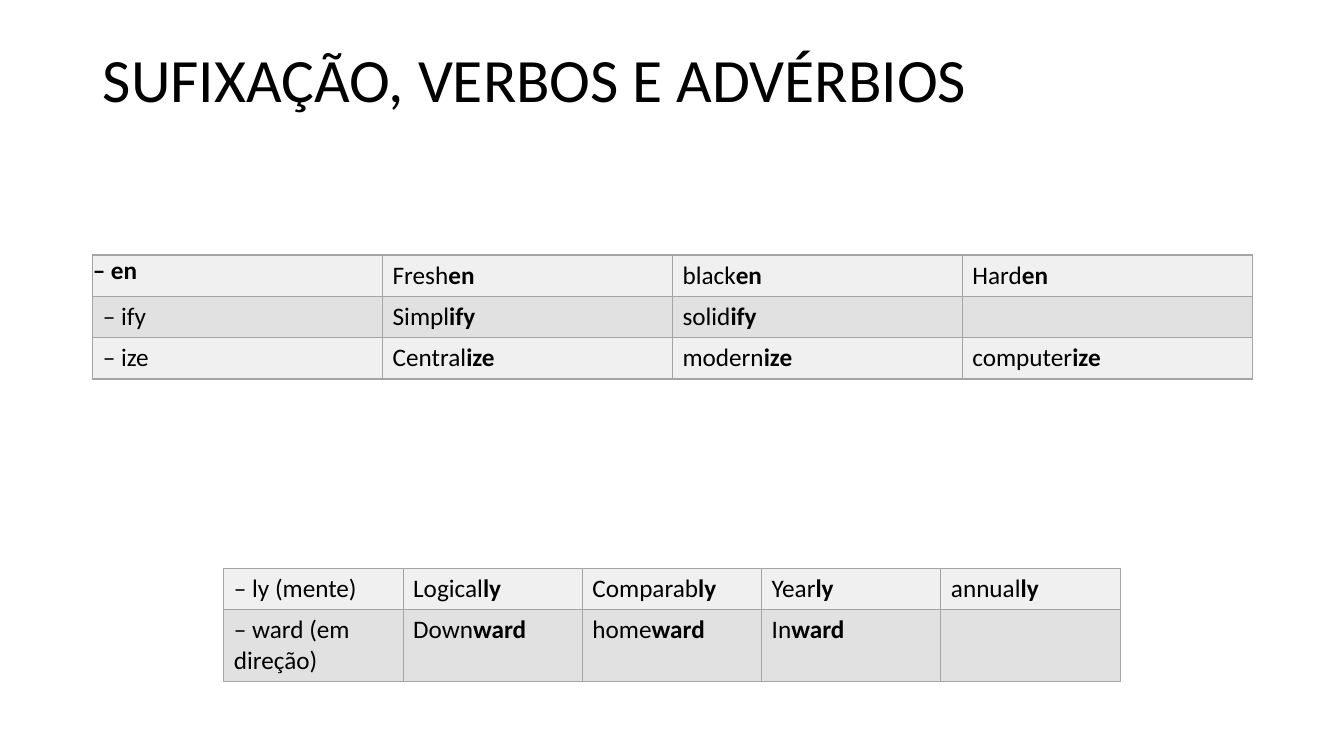
from lxml import etree
from pptx import Presentation
from pptx import util as u
from pptx.dml.color import RGBColor
from pptx.enum import text
from pptx.oxml import ns

PX = 9144  # 100 px to the inch
BLACK, BORDER = "000000", "A5A5A5"
BANDS = ("F0F0F0", "E1E1E1")

# The bar separates the stem from the bold suffix.
VERBS = [
    ["|– en", "Fresh|en", "black|en", "Hard|en"],
    ["– ify", "Simpl|ify", "solid|ify", ""],
    ["– ize", "Central|ize", "modern|ize", "computer|ize"],
]
ADVERBS = [
    ["– ly (mente)", "Logical|ly", "Comparab|ly", "Year|ly", "annual|ly"],
    ["– ward (em direção)", "Down|ward", "home|ward", "In|ward", ""],
]


def px(length):
    return u.Emu(round(length * PX))


def color(value):
    return RGBColor.from_string(value)


def set_values(target, values):
    for name, value in values.items():
        setattr(target, name, value)


def add_run(paragraph, words, size, bold=False):
    run = paragraph.add_run()
    run.text = words
    set_values(run.font, {"name": "Calibri", "size": u.Pt(size), "bold": bold})
    run.font.color.rgb = color(BLACK)


def add_title(slide, box, words):
    title = slide.shapes.title
    set_values(title, dict(zip(("left", "top", "width", "height"), map(px, box))))
    set_values(title.text_frame, {
        "vertical_anchor": text.MSO_ANCHOR.MIDDLE,
        "auto_size": text.MSO_AUTO_SIZE.NONE,
        "word_wrap": True,
    })
    paragraph = title.text_frame.paragraphs[0]
    set_values(paragraph, {"alignment": text.PP_ALIGN.LEFT, "line_spacing": 0.9})
    add_run(paragraph, words, 44)


def add_borders(cell):
    properties = cell._tc.get_or_add_tcPr()
    for side in ("a:lnL", "a:lnR", "a:lnT", "a:lnB"):
        line = etree.SubElement(properties, ns.qn(side), w=str(u.Pt(1)))
        fill = etree.SubElement(line, ns.qn("a:solidFill"))
        etree.SubElement(fill, ns.qn("a:srgbClr"), val=BORDER)


def fill_cell(cell, words, band):
    add_borders(cell)
    cell.fill.solid()
    cell.fill.fore_color.rgb = color(band)
    stem, _, suffix = words.partition("|")
    paragraph = cell.text_frame.paragraphs[0]
    for part, bold in ((stem, False), (suffix, True)):
        if part:
            add_run(paragraph, part, 18, bold)


def add_suffix_table(slide, box, rows, heights):
    """Place a banded table with equal columns and return it."""
    frame = slide.shapes.add_table(len(rows), len(rows[0]), *map(px, box))
    table = frame.table
    for column in table.columns:
        column.width = px(box[2] / len(rows[0]))
    for r, (row, height) in enumerate(zip(rows, heights)):
        table.rows[r].height = px(height)
        for c, words in enumerate(row):
            fill_cell(table.cell(r, c), words, BANDS[r % 2])
    return table


def build_slide(presentation):
    slide = presentation.slides.add_slide(presentation.slide_layouts[5])
    add_title(slide, (92, 40, 1150, 84), "SUFIXAÇÃO, VERBOS E ADVÉRBIOS")
    verbs = add_suffix_table(slide, (92, 253, 1150, 123), VERBS, (41, 41, 41))
    margins = ("margin_left", "margin_top", "margin_right", "margin_bottom")
    set_values(verbs.cell(0, 0), dict.fromkeys(margins, 0))
    add_suffix_table(slide, (222, 564, 889, 111), ADVERBS, (41, 70))


def main():
    presentation = Presentation()
    set_values(presentation, {"slide_width": px(1333), "slide_height": px(750)})
    build_slide(presentation)
    presentation.save("out.pptx")


if __name__ == "__main__":
    main()
